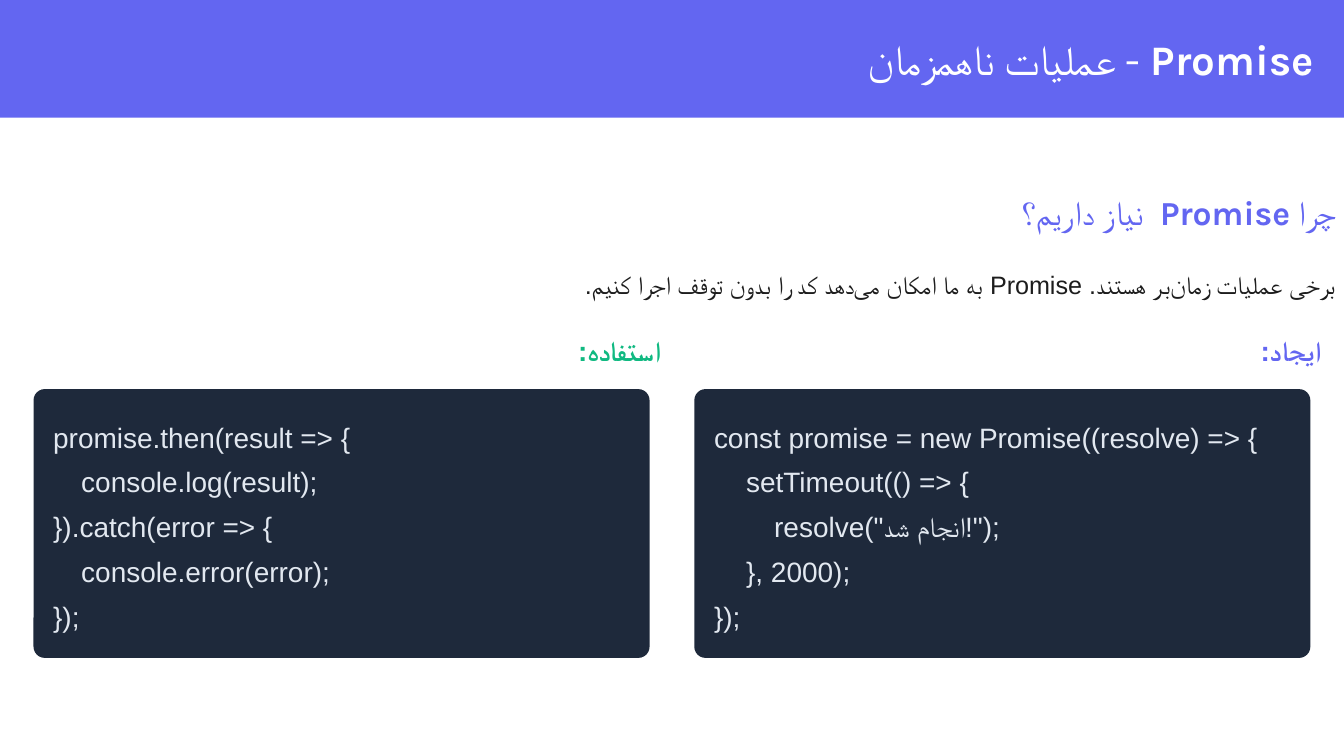
from lxml import etree
from pptx import Presentation
from pptx import util as u
from pptx.dml.color import RGBColor
from pptx.enum import shapes, text
from pptx.oxml.ns import qn

PX = 9525  # EMU per px, at 96 px to the inch

INDIGO = RGBColor(0x63, 0x66, 0xF1)
GREEN = RGBColor(0x10, 0xB9, 0x81)
NAVY = RGBColor(0x1E, 0x29, 0x3B)
MIST = RGBColor(0xE2, 0xE8, 0xF0)
INK = RGBColor(0x1D, 0x1D, 0x1D)
WHITE = RGBColor(0xFF, 0xFF, 0xFF)

HEADING_FONT = "Karla"
BODY_FONT = "Arial"
HALF_SPACE = chr(0x200C)  # Persian zero-width non-joiner


class SlideBuilder:
    """Draws styled elements on the current slide; lengths are in px."""

    def __init__(self, slide):
        self.slide = slide

    def box(self, left, top, width, height, color, radius=0):
        kind = shapes.MSO_SHAPE.ROUNDED_RECTANGLE if radius else shapes.MSO_SHAPE.RECTANGLE
        shape = self.slide.shapes.add_shape(
            kind, left * PX, top * PX, width * PX, height * PX)
        if radius:
            shape.adjustments[0] = radius / min(width, height)
        shape.shadow.inherit = False
        shape.fill.solid()
        shape.fill.fore_color.rgb = color
        shape.line.fill.background()

    def text(self, left, top, width, height, runs, size, color,
             font=BODY_FONT, leading=21, spacing=0, rtl=True):
        """Add one line of text; runs is a list of (words, bold)."""
        shape = self.slide.shapes.add_textbox(
            left * PX, top * PX, width * PX, height * PX)
        frame = shape.text_frame
        frame.word_wrap = True
        frame.margin_left = frame.margin_right = 0
        frame.margin_top = frame.margin_bottom = 0
        paragraph = frame.paragraphs[0]
        paragraph.line_spacing = u.Pt(leading)
        paragraph.space_before = paragraph.space_after = u.Pt(spacing)
        if rtl:
            paragraph.alignment = text.PP_ALIGN.RIGHT
            paragraph._p.get_or_add_pPr().set("rtl", "1")
        for words, bold in runs:
            run = paragraph.add_run()
            run.text = words
            run.font.size = u.Pt(size)
            run.font.bold = bold
            run.font.color.rgb = color
            run.font.name = font
            # Persian letters take the complex-script font
            properties = run._r.get_or_add_rPr()
            etree.SubElement(properties, qn("a:cs")).set("typeface", font)

    def code_column(self, left, label, label_color, lines):
        """Add a label over a dark card; lines is a list of (indent, code)."""
        self.text(left, 234, 448, 28, [(label, True)], 15, label_color)
        self.box(left, 278, 440, 192, NAVY, radius=8)
        for row, (indent, code) in enumerate(lines):
            inset = 14 + indent
            self.text(left + inset, 296 + 32 * row, 434 - inset, 28,
                      [(code, False)], 15, MIST, spacing=3, rtl=False)


def main():
    presentation = Presentation()
    presentation.slide_width = 960 * PX
    presentation.slide_height = 540 * PX
    slide = presentation.slides.add_slide(presentation.slide_layouts[6])
    builder = SlideBuilder(slide)

    # Title bar
    builder.box(0, 0, 960, 84, INDIGO)
    builder.text(479, 24, 467, 36,
                 [(" Promise ", True), ("- عملیات ناهمزمان", False)],
                 22.5, WHITE, font=HEADING_FONT, leading=27)

    # Question and answer
    builder.text(24, 134, 930, 32,
                 [("چرا ", False), ("Promise ", True), (" نیاز داریم؟", False)],
                 18, INDIGO, font=HEADING_FONT, leading=24)
    builder.text(24, 186, 930, 28,
                 [(f"برخی عملیات زمان{HALF_SPACE}بر هستند. "
                   f"Promise به ما امکان می{HALF_SPACE}دهد کد را "
                   "بدون توقف اجرا کنیم.", False)],
                 13.5, INK, spacing=3)

    # Code columns: creating on the right, using on the left
    builder.code_column(496, "ایجاد:", INDIGO, [
        (0, "const promise = new Promise((resolve) => {"),
        (23, "setTimeout(() => {"),
        (43, 'resolve("انجام شد!");'),
        (23, "}, 2000);"),
        (0, "});"),
    ])
    builder.code_column(24, "استفاده:", GREEN, [
        (0, "promise.then(result => {"),
        (20, "console.log(result);"),
        (0, "}).catch(error => {"),
        (20, "console.error(error);"),
        (0, "});"),
    ])

    presentation.save("out.pptx")


if __name__ == "__main__":
    main()
